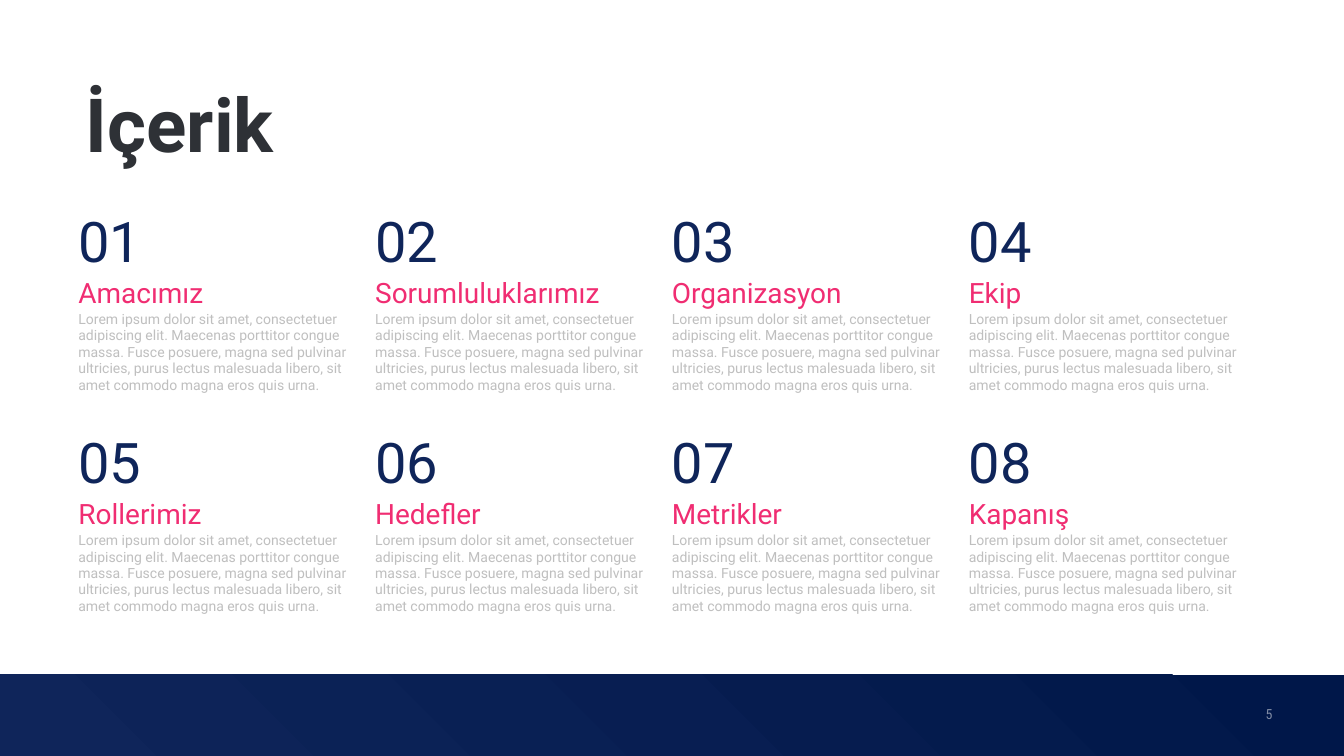
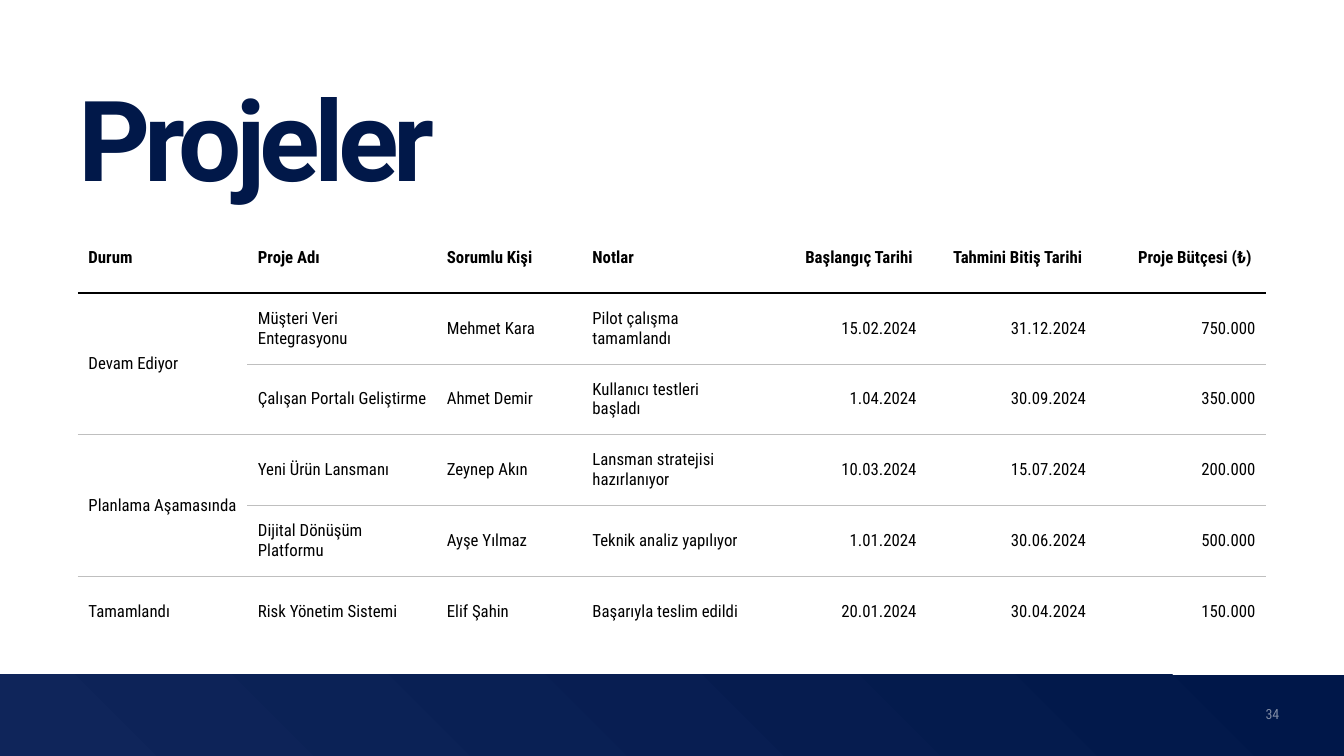
"""Builds a contents slide and a project table slide that share one footer band."""
from lxml import etree
from pptx import Presentation
from pptx.dml.color import RGBColor
from pptx.enum.shapes import MSO_SHAPE
from pptx.enum.text import MSO_ANCHOR, PP_ALIGN
from pptx.oxml import parse_xml
from pptx.oxml.ns import qn
from pptx.util import Pt

RECTANGLE = MSO_SHAPE.RECTANGLE
TOP, MIDDLE = MSO_ANCHOR.TOP, MSO_ANCHOR.MIDDLE
LEFT, RIGHT = PP_ALIGN.LEFT, PP_ALIGN.RIGHT

BODY_FONT, NARROW_FONT = "Roboto", "Roboto Condensed"
NAVY, DEEP_NAVY, TITLE_NAVY = "0F255A", "001749", "011849"
INK, PINK, SILVER, BLACK, WHITE = "2E3136", "F02D72", "BFBFBF", "000000", "FFFFFF"
A_NS = "http://schemas.openxmlformats.org/drawingml/2006/main"
PLAIN_TABLE_STYLE = "{2D5ABB26-0587-4C30-8999-92F81FD0307C}"

SLIDE_W, SLIDE_H = 1440, 810
BAND_H = 87
MARGIN_X, CONTENT_W = 84, 1272

TOPICS = ["Amacımız", "Sorumluluklarımız", "Organizasyon", "Ekip",
          "Rollerimiz", "Hedefler", "Metrikler", "Kapanış"]
TOPIC_TEXT = ("Lorem ipsum dolor sit amet, consectetuer adipiscing elit. Maecenas porttitor "
              "congue massa. Fusce posuere, magna sed pulvinar ultricies, purus lectus "
              "malesuada libero, sit amet commodo magna eros quis urna.")
TOPICS_PER_ROW = 4
TOPIC_ROWS = [54.6, 27.3, 27.3]
TOPIC_GAP = 39
TOPIC_TABLE_H = 435

PROJECT_HEADS = ["Durum", "Proje Adı", "Sorumlu Kişi", "Notlar", "Başlangıç Tarihi ",
                 "Tahmini Bitiş Tarihi ", "Proje Bütçesi (₺) "]
PROJECT_COLUMNS = [181.6, 202.4, 156, 187.2, 181.6, 181.6, 181.6]
FIRST_RIGHT_COLUMN = 4
PROJECT_ROW_H = 75.8
PROJECTS = {
    "Devam Ediyor": [
        ("Müşteri Veri Entegrasyonu", "Mehmet Kara", "Pilot çalışma tamamlandı",
         "15.02.2024", "31.12.2024", "750.000"),
        ("Çalışan Portalı Geliştirme", "Ahmet Demir", "Kullanıcı testleri başladı",
         "1.04.2024", "30.09.2024", "350.000"),
    ],
    "Planlama Aşamasında": [
        ("Yeni Ürün Lansmanı", "Zeynep Akın", "Lansman stratejisi hazırlanıyor",
         "10.03.2024", "15.07.2024", "200.000"),
        ("Dijital Dönüşüm Platformu", "Ayşe Yılmaz", "Teknik analiz yapılıyor",
         "1.01.2024", "30.06.2024", "500.000"),
    ],
    "Tamamlandı": [
        ("Risk Yönetim Sistemi", "Elif Şahin", "Başarıyla teslim edildi",
         "20.01.2024", "30.04.2024", "150.000"),
    ],
}


def rgb(color):
    return RGBColor.from_string(color)


def write(frame, text, font, size, color, bold=False, align=LEFT):
    paragraph = frame.paragraphs[0]
    paragraph.alignment = align
    run = paragraph.add_run()
    run.text = text
    run.font.name, run.font.size, run.font.bold = font, Pt(size), bold
    run.font.color.rgb = rgb(color)
    return run


def add_text(slide, box, text, font, size, color, bold=False, anchor=MIDDLE, inset=0):
    frame = slide.shapes.add_textbox(*map(Pt, box)).text_frame
    frame.word_wrap = True
    frame.vertical_anchor = anchor
    frame.margin_left = frame.margin_right = Pt(inset)
    frame.margin_top = frame.margin_bottom = Pt(inset / 2)
    run = write(frame, text, font, size, color, bold)
    return frame.paragraphs[0], run


def add_band(slide, number):
    top = SLIDE_H - BAND_H
    band = slide.shapes.add_shape(RECTANGLE, 0, Pt(top), Pt(SLIDE_W), Pt(BAND_H))
    band.shadow.inherit = False
    band.line.fill.background()
    band.fill.solid()
    solid = band._element.spPr.find(qn("a:solidFill"))
    solid.getparent().replace(solid, parse_xml(
        f'<a:gradFill xmlns:a="{A_NS}" rotWithShape="1"><a:gsLst>'
        f'<a:gs pos="0"><a:srgbClr val="{NAVY}"/></a:gs>'
        f'<a:gs pos="99000"><a:srgbClr val="{DEEP_NAVY}"/></a:gs></a:gsLst>'
        '<a:path path="circle"><a:fillToRect t="100000" r="100000"/></a:path></a:gradFill>'))
    run = add_text(slide, (1356, 750, 67, 29), str(number), NARROW_FONT, 15, WHITE)[1]
    tint = run._r.rPr.find(".//" + qn("a:srgbClr"))
    etree.SubElement(tint, qn("a:alpha"), val="50000")


def add_plain_table(slide, top, columns, rows):
    holder = slide.shapes.add_table(len(rows), len(columns), Pt(MARGIN_X), Pt(top),
                                    Pt(CONTENT_W), Pt(sum(rows)))
    table = holder.table
    table.first_row = table.horz_banding = False
    table._tbl.tblPr.find(qn("a:tableStyleId")).text = PLAIN_TABLE_STYLE
    for column, width in zip(table.columns, columns):
        column.width = Pt(width)
    for row, height in zip(table.rows, rows):
        row.height = Pt(height)
    return holder


def set_cell(cell, margins, borders=()):
    cell.vertical_anchor = MIDDLE
    (cell.margin_left, cell.margin_top,
     cell.margin_right, cell.margin_bottom) = map(Pt, margins)
    for side, color, width in borders:
        cell._tc.get_or_add_tcPr().append(parse_xml(
            f'<a:ln{side} xmlns:a="{A_NS}" w="{Pt(width)}"><a:solidFill>'
            f'<a:srgbClr val="{color}"/></a:solidFill></a:ln{side}>'))
    cell.fill.background()


def build_contents(slide):
    add_band(slide, 5)
    add_text(slide, (85, 88.5, 1271, 85), "İçerik", BODY_FONT, 80, INK, True, inset=7.2)
    columns = [CONTENT_W / TOPICS_PER_ROW] * TOPICS_PER_ROW
    holder = add_plain_table(slide, 224.6, columns, TOPIC_ROWS + [TOPIC_GAP] + TOPIC_ROWS)
    for cell in holder.table.iter_cells():
        set_cell(cell, (0, 0, 28, 0))
    for index, topic in enumerate(TOPICS):
        group, column = divmod(index, TOPICS_PER_ROW)
        first_row = group * (len(TOPIC_ROWS) + 1)
        lines = [(f"{index + 1:02}", 60, NAVY), (topic, 30, PINK), (TOPIC_TEXT, 15, SILVER)]
        for offset, (text, size, color) in enumerate(lines):
            cell = holder.table.cell(first_row + offset, column)
            write(cell.text_frame, text, BODY_FONT, size, color)
    holder.height = Pt(TOPIC_TABLE_H)


def build_projects(slide):
    add_band(slide, 34)
    paragraph, run = add_text(slide, (MARGIN_X, 87, 1277, 133), "Projeler", BODY_FONT, 120,
                              TITLE_NAVY, True, TOP)
    paragraph.line_spacing = Pt(132)
    run._r.get_or_add_rPr().set("spc", "-600")

    rows = [PROJECT_HEADS]
    spans = []
    for status, projects in PROJECTS.items():
        spans.append((len(rows), len(rows) + len(projects) - 1))
        for position, project in enumerate(projects):
            rows.append(["" if position else status, *project])
    table = add_plain_table(slide, 238.3, PROJECT_COLUMNS, [PROJECT_ROW_H] * len(rows)).table

    head_rule, row_rule, no_rule = (BLACK, 3), (SILVER, 0.5), (WHITE, 1)
    rules = [no_rule, head_rule] + [row_rule] * (len(rows) - 2) + [no_rule]
    for r, texts in enumerate(rows):
        for c, text in enumerate(texts):
            cell = table.cell(r, c)
            borders = [("L", *no_rule), ("R", *no_rule), ("T", *rules[r]), ("B", *rules[r + 1])]
            set_cell(cell, [10.8] * 4, borders)
            if text:
                align = RIGHT if c >= FIRST_RIGHT_COLUMN else LEFT
                write(cell.text_frame, text, NARROW_FONT, 18, BLACK, r == 0, align)
    for first, last in spans:
        if last > first:
            table.cell(first, 0).merge(table.cell(last, 0))


def main():
    deck = Presentation()
    deck.slide_width, deck.slide_height = Pt(SLIDE_W), Pt(SLIDE_H)
    blank = deck.slide_layouts[6]
    for build in (build_contents, build_projects):
        build(deck.slides.add_slide(blank))
    deck.save("out.pptx")


if __name__ == "__main__":
    main()
